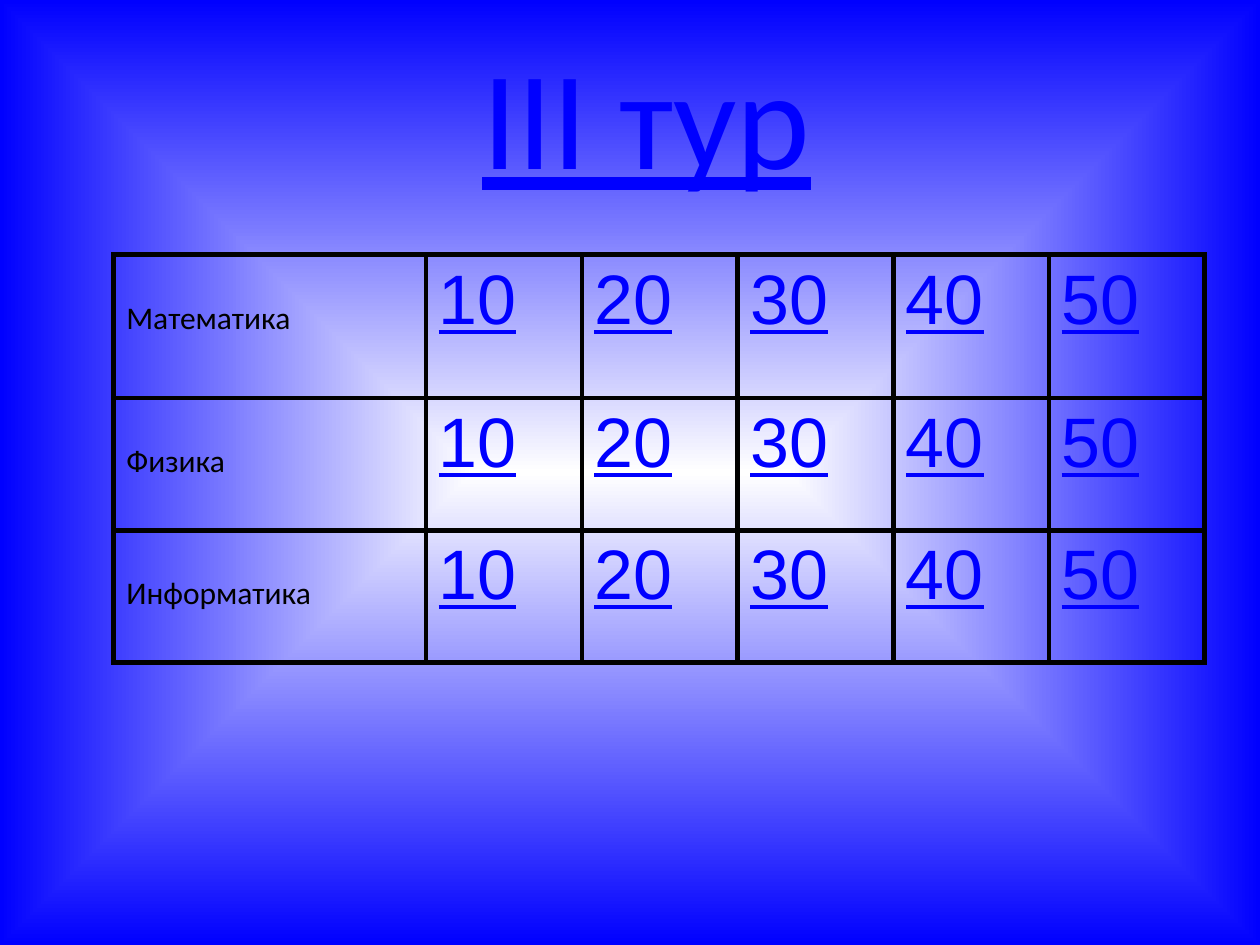
from lxml import etree
from pptx import Presentation
from pptx import util as u
from pptx.dml.color import RGBColor
from pptx.enum import dml, text
from pptx.oxml.ns import qn

COLORS = {"link": "0000FF", "center": "FFFFFF", "ink": "000000"}
SUBJECTS = ["Математика", "Физика", "Информатика"]
SCORES = [10, 20, 30, 40, 50]
ROW_HEIGHTS = [82, 75.5, 75.5]
SUBJECT_WIDTH, SCORE_WIDTH = 178.5, 89


def rgb(name):
    return RGBColor.from_string(COLORS[name])


def format_font(font, name, size, color, underline=False):
    font.name = name
    font.size = u.Pt(size)
    font.color.rgb = rgb(color)
    font.underline = underline


def paint_background(slide):
    """Fill from a bright centre to blue edges."""
    fill = slide.background.fill
    fill.gradient()
    for stop, color in zip(fill.gradient_stops, ("center", "link")):
        stop.color.rgb = rgb(color)
    gradient = slide.element.find(".//" + qn("a:gradFill"))
    gradient.remove(gradient.find(qn("a:lin")))
    shade = etree.SubElement(gradient, qn("a:path"), path="shape")
    etree.SubElement(shade, qn("a:fillToRect"),
                     {side: "50000" for side in "ltrb"})


def add_title(slide, wording):
    title = slide.shapes.title
    title.left, title.top = u.Pt(36.5), u.Pt(20)
    title.width, title.height = u.Pt(648), u.Pt(90)
    frame = title.text_frame
    frame.text = wording
    frame.auto_size = text.MSO_AUTO_SIZE.NONE
    frame.vertical_anchor = text.MSO_ANCHOR.MIDDLE
    frame.margin_left = u.Pt(25)
    paragraph = frame.paragraphs[0]
    paragraph.alignment = text.PP_ALIGN.CENTER
    format_font(paragraph.font, "Calibri", 80, "link", True)


def add_borders(cell, width):
    properties = cell._tc.get_or_add_tcPr()
    for index, side in enumerate(("lnL", "lnR", "lnT", "lnB")):
        line = etree.Element(qn("a:" + side), w=str(u.Pt(width)))
        fill = etree.SubElement(line, qn("a:solidFill"))
        etree.SubElement(fill, qn("a:srgbClr"), val=COLORS["ink"])
        properties.insert(index, line)


def fill_cell(cell, wording, *font_format):
    cell.text = wording
    cell.fill.background()
    add_borders(cell, 3)
    format_font(cell.text_frame.paragraphs[0].font, *font_format)


def add_score_table(slide):
    widths = [SUBJECT_WIDTH] + [SCORE_WIDTH] * len(SCORES)
    frame = slide.shapes.add_table(
        len(SUBJECTS), len(widths), u.Pt(65), u.Pt(145.5),
        u.Pt(sum(widths)), u.Pt(sum(ROW_HEIGHTS)))
    table = frame.table
    table.first_row = table.horz_banding = False
    for column, width in zip(table.columns, widths):
        column.width = u.Pt(width)
    for row, height, subject in zip(table.rows, ROW_HEIGHTS, SUBJECTS):
        row.height = u.Pt(height)
        subject_cell, *score_cells = row.cells
        fill_cell(subject_cell, subject, "Calibri", 18, "ink")
        subject_cell.margin_top = u.Pt(25.6)
        for cell, score in zip(score_cells, SCORES):
            fill_cell(cell, str(score), "Arial", 40, "link", True)


def main():
    presentation = Presentation()
    presentation.slide_width, presentation.slide_height = u.Pt(720), u.Pt(540)
    # Title Only layout
    slide = presentation.slides.add_slide(presentation.slide_layouts[5])
    paint_background(slide)
    add_title(slide, "III тур")
    add_score_table(slide)
    presentation.save("out.pptx")


if __name__ == "__main__":
    main()
